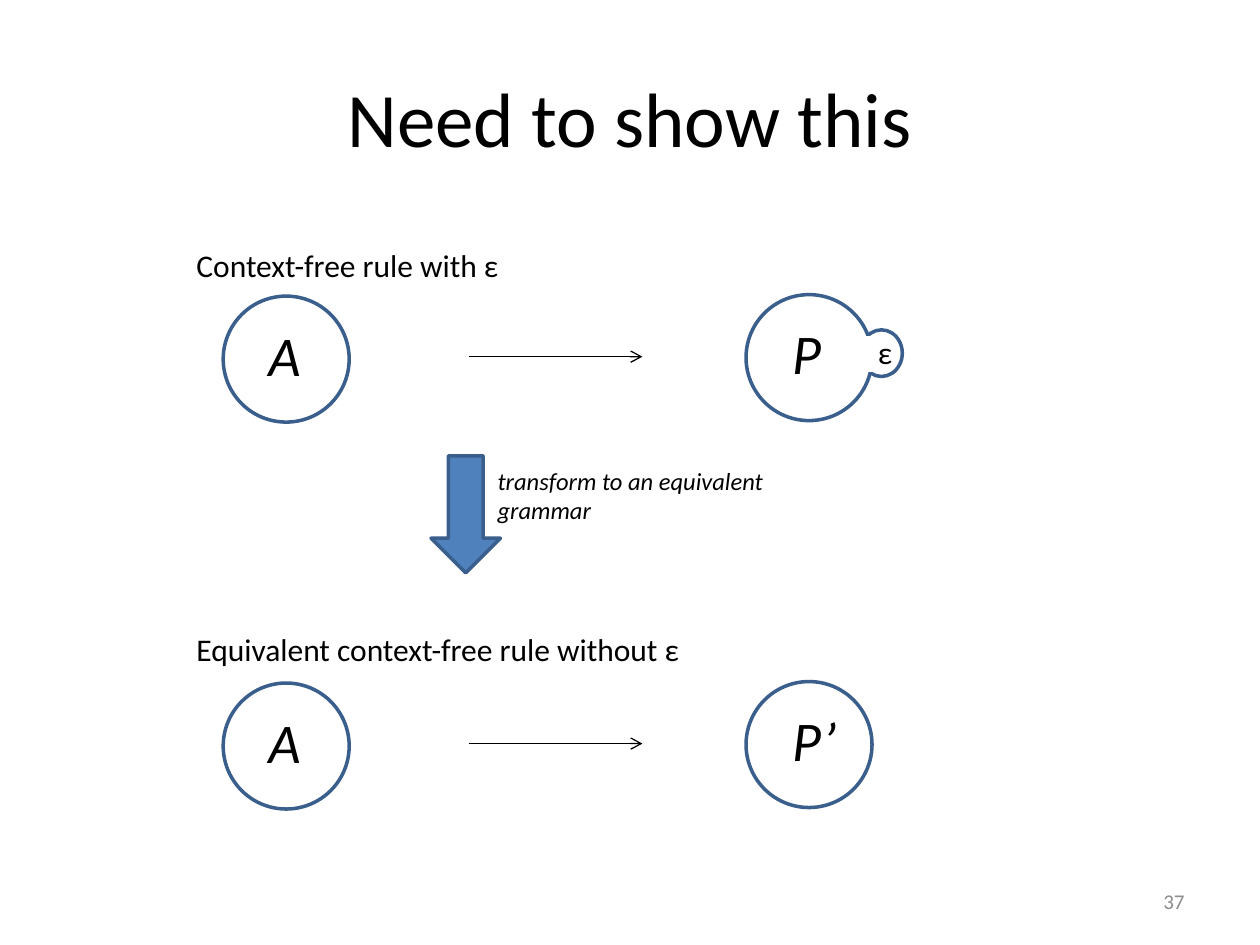
from dataclasses import dataclass

import pptx
import pptx.dml.color
import pptx.enum.shapes
import pptx.enum.text
import pptx.oxml
import pptx.oxml.ns
import pptx.util
from pptx.util import Cm

RGB = pptx.dml.color.RGBColor
SHAPE = pptx.enum.shapes.MSO_SHAPE
ALIGN = pptx.enum.text.PP_ALIGN
ANCHOR = pptx.enum.text.MSO_ANCHOR


@dataclass(frozen=True)
class Theme:
    font: str = "Calibri"
    ink: RGB = RGB(0x00, 0x00, 0x00)
    paper: RGB = RGB(0xFF, 0xFF, 0xFF)
    muted: RGB = RGB(0x8C, 0x8C, 0x8C)
    accent: RGB = RGB(0x4F, 0x81, 0xBD)
    outline: RGB = RGB(0x3A, 0x5F, 0x8C)
    title_size: float = 44
    symbol_size: float = 32
    caption_size: float = 18
    note_size: float = 14
    number_size: float = 12
    outline_width: float = 2
    arrow_width: float = 0.75


@dataclass(frozen=True)
class Box:
    """A rectangle in centimetres."""
    left: float
    top: float
    width: float
    height: float

    def lengths(self) -> tuple:
        return Cm(self.left), Cm(self.top), Cm(self.width), Cm(self.height)


@dataclass(frozen=True)
class Rule:
    """A grammar rule: left symbol -> right symbol, under a caption."""
    caption: str
    caption_box: Box
    top: float
    left_symbol: str
    right_symbol: str
    right_width: float


THEME = Theme()
CIRCLE = 2.54
RULES = [
    Rule("Context-free rule with ε", Box(3.71, 4.83, 6.71, 1.02),
         5.97, "A", "P", 1.09),
    Rule("Equivalent context-free rule without ε", Box(3.71, 12.57, 10.39, 1.02),
         13.77, "A", "P’", 1.42),
]


def add_text(slide, text: str, box: Box, size: float, color: RGB = THEME.ink,
             italic: bool = False, wrap: bool = False,
             align: ALIGN = ALIGN.LEFT, anchor: ANCHOR = ANCHOR.TOP) -> None:
    frame = slide.shapes.add_textbox(*box.lengths()).text_frame
    frame.text = text
    frame.word_wrap = wrap
    frame.vertical_anchor = anchor
    paragraph = frame.paragraphs[0]
    paragraph.alignment = align
    font = paragraph.runs[0].font
    font.name = THEME.font
    font.size = pptx.util.Pt(size)
    font.italic = italic
    font.color.rgb = color


def add_outlined(slide, kind: SHAPE, box: Box, fill: RGB = THEME.paper,
                 line: RGB = THEME.outline) -> None:
    shape = slide.shapes.add_shape(kind, *box.lengths())
    shape.shadow.inherit = False
    shape.fill.solid()
    shape.fill.fore_color.rgb = fill
    shape.line.color.rgb = line
    shape.line.width = pptx.util.Pt(THEME.outline_width)


def add_arrow(slide, start: float, end: float, height: float) -> None:
    arrow = slide.shapes.add_connector(
        pptx.enum.shapes.MSO_CONNECTOR.STRAIGHT,
        Cm(start), Cm(height), Cm(end), Cm(height))
    arrow.line.color.rgb = THEME.ink
    arrow.line.width = pptx.util.Pt(THEME.arrow_width)
    namespace = pptx.oxml.ns.nsdecls("a")
    arrow.line._get_or_add_ln().append(
        pptx.oxml.parse_xml(f'<a:tailEnd {namespace} type="arrow"/>'))
    arrow._element.spPr.append(
        pptx.oxml.parse_xml(f"<a:effectLst {namespace}/>"))


def add_rule(slide, rule: Rule) -> None:
    top = rule.top
    add_text(slide, rule.caption, rule.caption_box, THEME.caption_size)
    add_outlined(slide, SHAPE.OVAL, Box(4.5, top, CIRCLE, CIRCLE))
    add_arrow(slide, 9.45, 12.95, top + 1.22)
    add_outlined(slide, SHAPE.OVAL, Box(15.04, top - 0.03, CIRCLE, CIRCLE))
    add_text(slide, rule.left_symbol, Box(5.16, top + 0.36, 1.17, 1.63),
             THEME.symbol_size, italic=True)
    add_text(slide, rule.right_symbol, Box(15.72, top + 0.33, rule.right_width, 1.63),
             THEME.symbol_size, italic=True)


def main() -> None:
    deck = pptx.Presentation()
    deck.slide_width, deck.slide_height = Cm(25.4), Cm(19.05)
    slide = deck.slides.add_slide(deck.slide_layouts[6])

    # Title and slide number
    add_text(slide, "Need to show this", Box(1.27, 0.76, 22.86, 3.18),
             THEME.title_size, wrap=True, align=ALIGN.CENTER, anchor=ANCHOR.MIDDLE)
    add_text(slide, "37", Box(18.21, 17.65, 5.92, 1.02), THEME.number_size,
             THEME.muted, wrap=True, align=ALIGN.RIGHT, anchor=ANCHOR.MIDDLE)

    # Epsilon bud, behind the circle it grows from
    add_outlined(slide, SHAPE.OVAL, Box(17.35, 6.65, 0.84, 0.94))
    add_text(slide, "ε", Box(17.45, 6.58, 0.81, 1.02), THEME.caption_size)

    # The rule before and after
    for rule in RULES:
        add_rule(slide, rule)

    # Opening that joins the bud to its circle
    add_outlined(slide, SHAPE.RECTANGLE, Box(17.35, 6.81, 0.28, 0.66),
                 line=THEME.paper)

    # Transformation step
    add_outlined(slide, SHAPE.DOWN_ARROW, Box(8.69, 9.19, 1.4, 2.36),
                 fill=THEME.accent)
    add_text(slide, "transform to an equivalent grammar",
             Box(9.78, 9.27, 6.35, 1.45), THEME.note_size, italic=True, wrap=True)

    deck.save("out.pptx")


if __name__ == "__main__":
    main()
